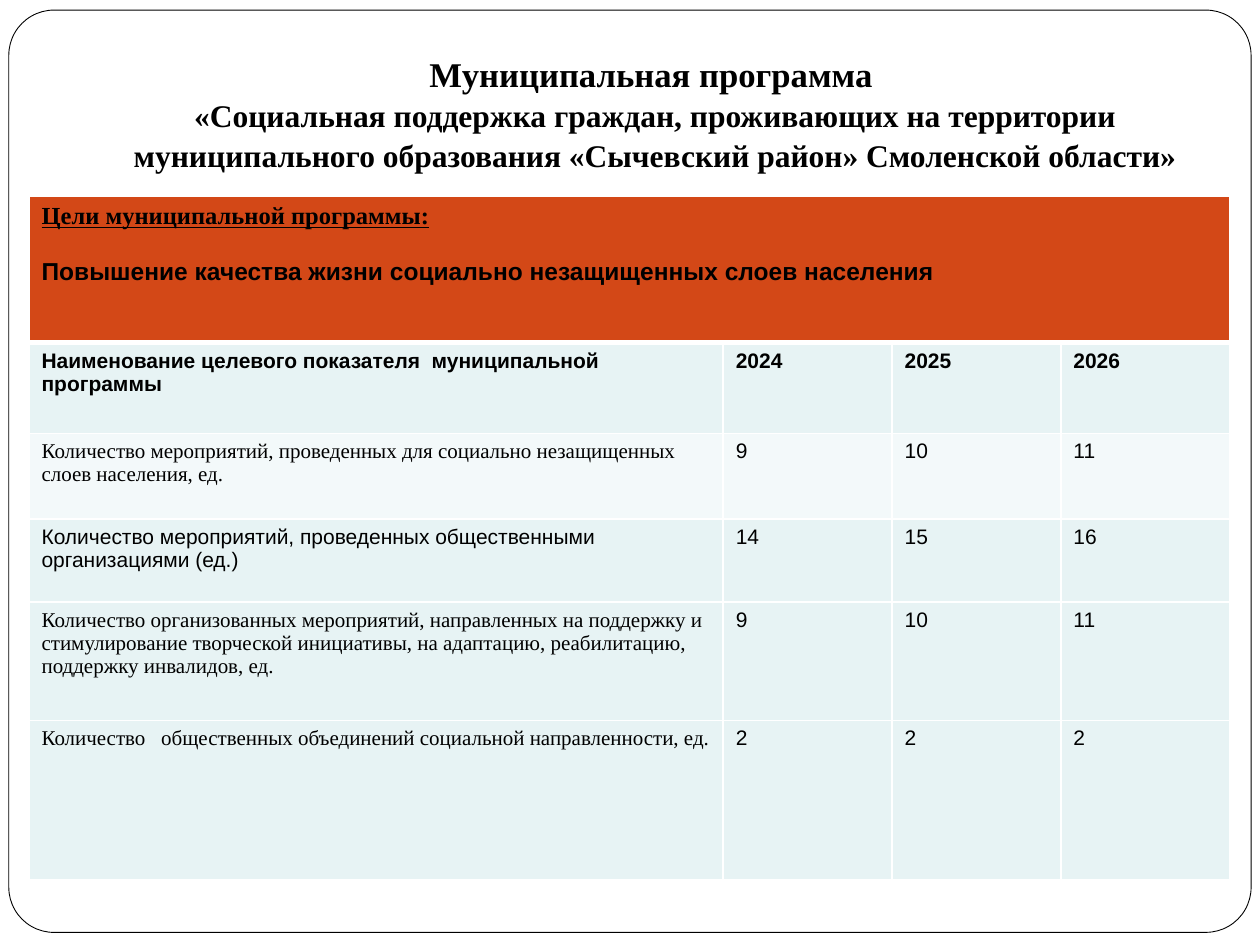
from dataclasses import dataclass

from lxml.etree import SubElement
from pptx import Presentation
from pptx.dml.color import RGBColor
from pptx.enum.shapes import MSO_SHAPE
from pptx.enum.text import MSO_ANCHOR, PP_ALIGN
from pptx.oxml.ns import qn
from pptx.slide import Slide
from pptx.util import Inches, Pt

COLORS = {
    "ink": "000000",
    "paper": "FFFFFF",
    "goal": "D34817",
    "band": "E7F3F4",
    "light": "F3F9FA",
}
SERIF = "Times New Roman"
SANS = "Arial"
TITLE = [
    ("Муниципальная программа ", 19.8),
    ("«Социальная поддержка граждан, проживающих на территории", 18),
    ("муниципального образования «Сычевский район» Смоленской области»", 18),
]
GOAL_HEADING = "Цели муниципальной программы:"
GOAL = "Повышение качества жизни социально незащищенных слоев населения"
COLUMN_WIDTHS = [5.51, 1.34, 1.34, 1.34]
ROW_HEIGHTS = [1.16, 0.72, 0.68, 0.66, 0.94, 1.26]
INDICATORS = [
    ("Наименование целевого показателя  муниципальной программы",
     SANS, "band", True, ["2024", "2025", "2026"]),
    ("Количество мероприятий, проведенных для социально незащищенных слоев населения, ед.",
     SERIF, "light", False, ["9", "10", "11"]),
    ("Количество мероприятий, проведенных общественными организациями (ед.)",
     SANS, "band", False, ["14", "15", "16"]),
    ("Количество организованных мероприятий, направленных на поддержку и стимулирование "
     "творческой инициативы, на адаптацию, реабилитацию, поддержку инвалидов, ед.",
     SERIF, "band", False, ["9", "10", "11"]),
    ("Количество   общественных объединений социальной направленности, ед.",
     SERIF, "band", False, ["2", "2", "2"]),
]


@dataclass
class ProgramPage:
    """Draws the elements of a municipal program page in one style."""

    page: Slide

    def color(self, name):
        return RGBColor.from_string(COLORS[name])

    def style(self, font, size, name=SANS, bold=False, underline=False):
        font.size = Pt(size)
        font.name = name
        font.bold = bold
        font.underline = underline
        font.color.rgb = self.color("ink")

    def frame(self, left, top, width, height):
        shape = self.page.shapes.add_shape(
            MSO_SHAPE.ROUNDED_RECTANGLE,
            Inches(left), Inches(top), Inches(width), Inches(height))
        shape.adjustments[0] = 0.049
        shape.shadow.inherit = False
        shape.fill.solid()
        shape.fill.fore_color.rgb = self.color("paper")
        shape.line.color.rgb = self.color("ink")
        shape.line.width = Pt(0.5)

    def title(self, left, top, width, height, lines):
        box = self.page.shapes.add_textbox(
            Inches(left), Inches(top), Inches(width), Inches(height))
        text = box.text_frame
        text.word_wrap = True
        text.vertical_anchor = MSO_ANCHOR.BOTTOM
        text.margin_bottom = Inches(0.1)
        para = text.paragraphs[0]
        para.alignment = PP_ALIGN.CENTER
        para.line_spacing = 1.05
        for index, (line, size) in enumerate(lines):
            if index:
                para.add_line_break()
            span = para.add_run()
            span.text = line
            self.style(span.font, size, SERIF, bold=True)

    def cell(self, cell, fill, top=1, bottom=1):
        properties = cell._tc.get_or_add_tcPr()
        for side, width in (("L", 1), ("R", 1), ("T", top), ("B", bottom)):
            line = SubElement(properties, qn(f"a:ln{side}"), w=str(Pt(width)))
            paint = SubElement(line, qn("a:solidFill"))
            SubElement(paint, qn("a:srgbClr"), val=COLORS["paper"])
        cell.fill.solid()
        cell.fill.fore_color.rgb = self.color(fill)

    def goal(self, cell):
        cell.text = GOAL_HEADING
        heading = cell.text_frame.paragraphs[0]
        self.style(heading.font, 14, SERIF, bold=True, underline=True)
        para = cell.text_frame.add_paragraph()
        para.text = GOAL
        para.space_before = Pt(16)
        self.style(para.font, 14, bold=True)

    def table(self, left, top):
        table = self.page.shapes.add_table(
            len(ROW_HEIGHTS), len(COLUMN_WIDTHS), Inches(left), Inches(top),
            Inches(sum(COLUMN_WIDTHS)), Inches(sum(ROW_HEIGHTS))).table
        for column, width in zip(table.columns, COLUMN_WIDTHS):
            column.width = Inches(width)
        for row, height in zip(table.rows, ROW_HEIGHTS):
            row.height = Inches(height)
        for cell in table.rows[0].cells:
            self.cell(cell, "goal", bottom=3)
        table.cell(0, 0).merge(table.cell(0, len(COLUMN_WIDTHS) - 1))
        self.goal(table.cell(0, 0))
        for row, (label, name, fill, bold, values) in enumerate(INDICATORS, 1):
            for column, content in enumerate([label, *values]):
                cell = table.cell(row, column)
                self.cell(cell, fill, top=3 if row == 1 else 1)
                cell.text = content
                font = cell.text_frame.paragraphs[0].font
                self.style(font, 12, SANS if column else name, bold)


def main():
    deck = Presentation()
    deck.slide_width = Inches(10)
    deck.slide_height = Inches(7.5)
    page = ProgramPage(deck.slides.add_slide(deck.slide_layouts[6]))
    page.frame(0.07, 0.08, 9.86, 7.32)
    page.title(0.55, 0.23, 9.3, 1.25, TITLE)
    page.table(0.23, 1.56)
    deck.save("out.pptx")


if __name__ == "__main__":
    main()
